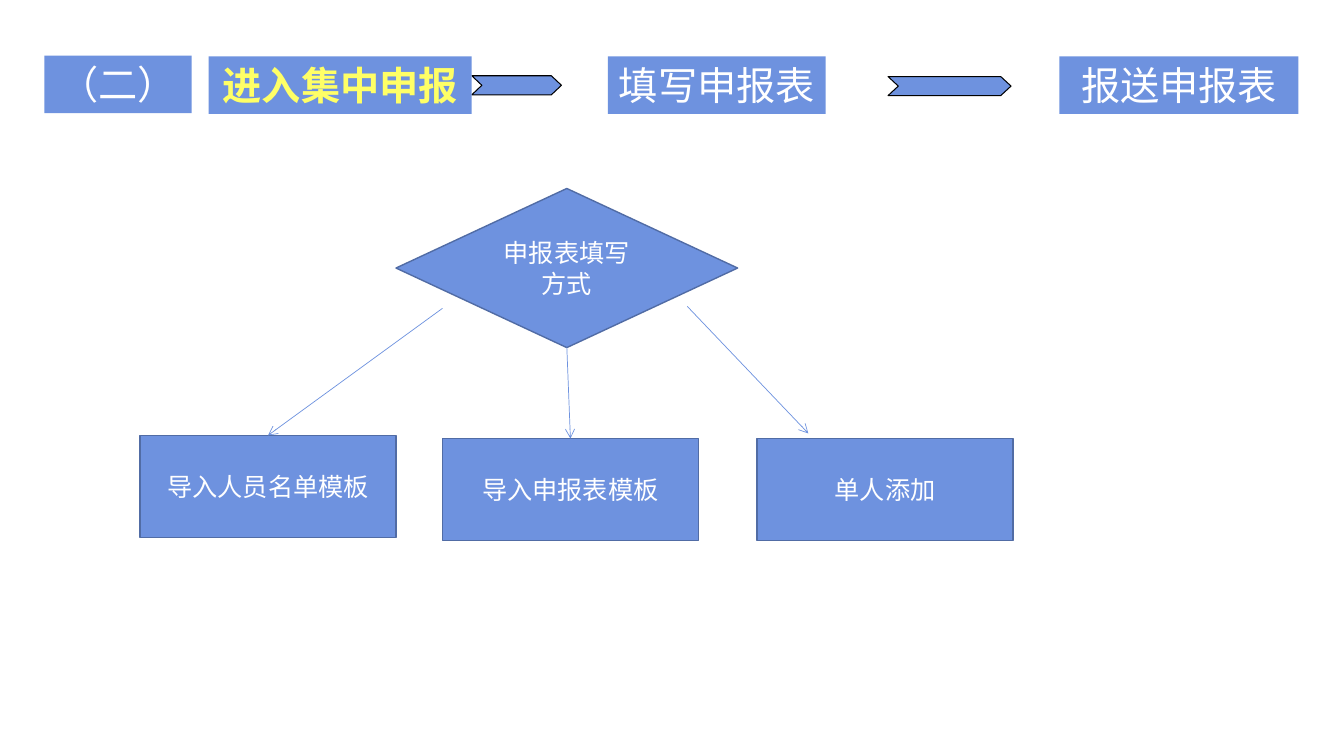
from dataclasses import dataclass

from lxml import etree
from pptx import Presentation
from pptx.dml.color import RGBColor
from pptx.enum import shapes, text
from pptx.oxml.ns import qn
from pptx.util import Cm, Pt


@dataclass(frozen=True)
class Theme:
    font: str = "Noto Sans CJK SC"
    fill: RGBColor = RGBColor(0x6E, 0x92, 0xDF)
    edge: RGBColor = RGBColor(0x51, 0x6C, 0xA5)
    black: RGBColor = RGBColor(0, 0, 0)
    white: RGBColor = RGBColor(0xFF, 0xFF, 0xFF)
    current: RGBColor = RGBColor(0xFF, 0xFF, 0x66)
    heading: int = 28
    body: int = 18


theme = Theme()
kinds = shapes.MSO_SHAPE

prs = Presentation()
prs.slide_width, prs.slide_height = Cm(33.87), Cm(19.05)
s = prs.slides.add_slide(prs.slide_layouts[6])


def add_block(kind, box, edge=None, width=1):
    sp = s.shapes.add_shape(kind, *map(Cm, box))
    sp.shadow.inherit = False
    sp.fill.solid()
    sp.fill.fore_color.rgb = theme.fill
    if edge is None:
        sp.line.fill.background()
    else:
        sp.line.color.rgb = edge
        sp.line.width = Pt(width)
    return sp


def write(sp, label, anchor, **formats):
    """Centre one line of text in a shape, in the theme font for both scripts."""
    tf = sp.text_frame
    tf.word_wrap = True
    tf.vertical_anchor = anchor
    p = tf.paragraphs[0]
    p.alignment = text.PP_ALIGN.CENTER
    r = p.add_run()
    r.text = label
    for name, value in {"name": theme.font, **formats}.items():
        setattr(r.font, name, value)
    r.font.color.rgb = theme.current if formats.get("bold") else theme.white
    etree.SubElement(r.font._element, qn("a:ea"), typeface=theme.font)


# Step bar
for left, top, width, notch in [(11.89, 1.91, 2.26, 0.53), (22.38, 1.93, 3.1, 0.54)]:
    chevron = add_block(kinds.CHEVRON, (left, top, width, 0.48), theme.black, 0.75)
    chevron.adjustments[0] = notch

for label, left, top, width, bold in [
    ("（二）", 1.12, 1.4, 3.71, False),
    ("进入集中申报", 5.26, 1.42, 6.63, True),
    ("填写申报表", 15.32, 1.42, 5.49, False),
    ("报送申报表", 26.7, 1.42, 6.02, False),
]:
    step = add_block(kinds.RECTANGLE, (left, top, width, 1.45))
    write(step, label, text.MSO_ANCHOR.TOP, size=Pt(theme.heading), bold=bold)

# Decision and its three ways of filling in the form
decision = add_block(kinds.FLOWCHART_DECISION, (9.98, 4.75, 8.61, 4.01), theme.edge)
write(decision, "申报表填写方式", text.MSO_ANCHOR.MIDDLE, size=Pt(theme.body))

methods = []
for label, left, top in [
    ("导入人员名单模板", 3.53, 10.97),
    ("导入申报表模板", 11.15, 11.05),
    ("单人添加", 19.08, 11.05),
]:
    method = add_block(kinds.RECTANGLE, (left, top, 6.45, 2.57), theme.edge)
    write(method, label, text.MSO_ANCHOR.MIDDLE, size=Pt(theme.body))
    methods.append(method)

roster, form, single = methods
for ends, source, target in [
    ((11.15, 7.77, 6.76, 10.97), None, roster),
    ((14.28, 8.76, 14.38, 11.05), decision, form),
    ((17.32, 7.72, 20.37, 10.92), None, None),
]:
    arrow = s.shapes.add_connector(shapes.MSO_CONNECTOR.STRAIGHT, *map(Cm, ends))
    if source is not None:
        arrow.begin_connect(source, 2)
    if target is not None:
        arrow.end_connect(target, 0)
    arrow.line.color.rgb = theme.fill
    arrow.line.width = Pt(0.5)
    etree.SubElement(arrow.line._get_or_add_ln(), qn("a:tailEnd"), type="arrow")
    etree.SubElement(arrow._element.spPr, qn("a:effectLst"))

prs.save("out.pptx")
